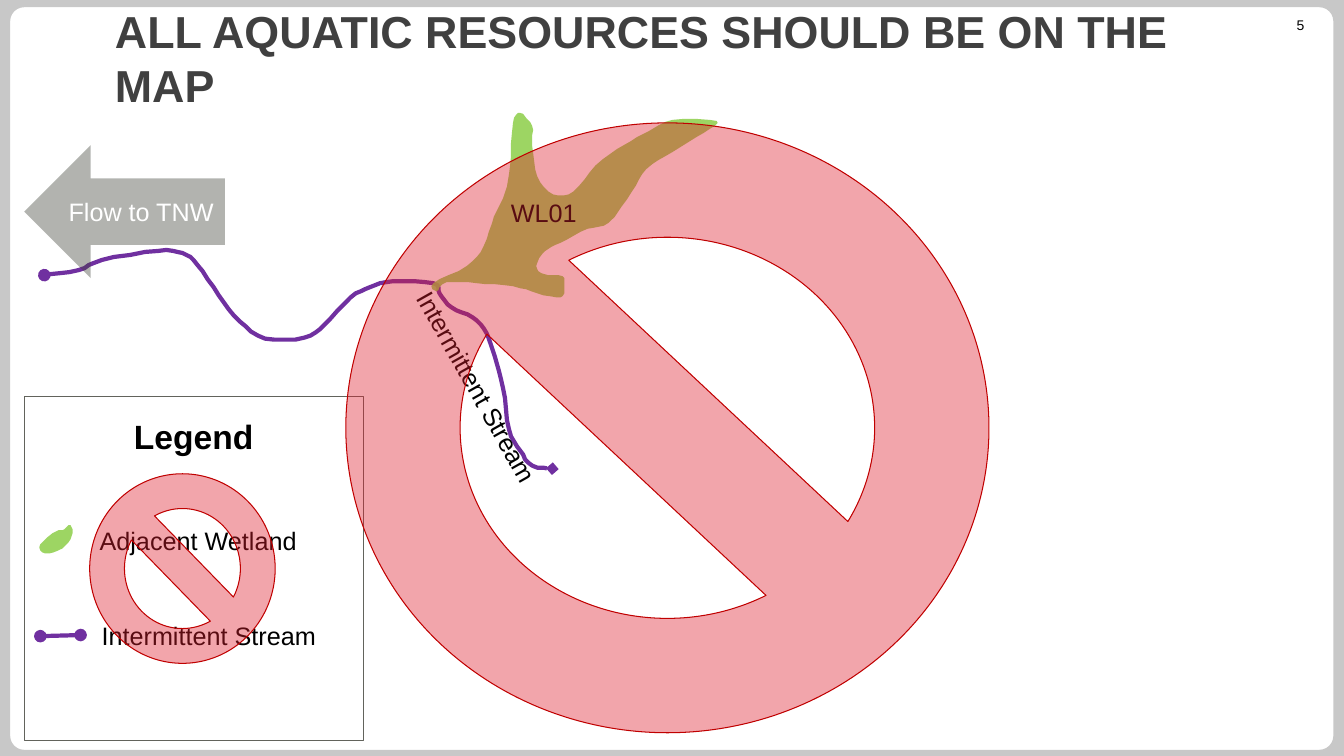
from dataclasses import dataclass
from itertools import chain

from lxml.etree import SubElement
from pptx import Presentation
from pptx.dml.color import RGBColor
from pptx.enum.shapes import MSO_CONNECTOR, MSO_SHAPE
from pptx.enum.text import MSO_ANCHOR, MSO_AUTO_SIZE, PP_ALIGN
from pptx.oxml.ns import qn
from pptx.util import Pt


@dataclass(frozen=True)
class Theme:
    face: str = "Arial"
    back: str = "C8C8C8"
    card: str = "FFFFFF"
    title: str = "404040"
    text: str = "000000"
    stream: str = "7030A0"
    marsh: str = "92D050"
    arrow: str = "3F4339"
    frame: str = "62635C"
    ban: str = "DF1F2E"
    rim: str = "C00000"
    head: int = 32
    key: int = 24
    body: int = 18
    small: int = 10
    thick: float = 3
    thin: float = 0.75


THEME = Theme()
UNIT = Pt(0.72)  # grid step of the bends below
STEPS = 4  # short lines drawn from one bend to the next

# Only the main bends are listed; smooth() fills in the curve between them.
STREAM = {
    "lower reach": [(44, 173), (78, 168), (101, 158), (157, 149), (181, 151),
                    (196, 163), (217, 193), (238, 219), (263, 236)],
    "middle reach": [(302, 235), (322, 222), (348, 195), (367, 185), (390, 179),
                     (430, 181)],
    "upper reach": [(436, 191), (448, 205), (469, 215), (483, 231), (491, 254),
                    (499, 285), (505, 326), (516, 347), (528, 362), (548, 365)],
}
MARSH = {
    "west bank": [(430, 181), (463, 164), (480, 144), (490, 115), (501, 91),
                  (506, 65)],
    "north arm": [(509, 22), (516, 12), (528, 25), (528, 45), (533, 75), (549, 93)],
    "east arm, upper bank": [(569, 90), (591, 64), (619, 44), (644, 30), (667, 19),
                             (711, 20)],
    "east arm, lower bank": [(698, 32), (667, 51), (641, 68), (627, 90), (604, 121),
                             (583, 127)],
    "south lobe": [(556, 141), (541, 149), (532, 164), (540, 172), (558, 174),
                   (560, 185), (556, 195), (533, 191)],
    "south bank": [(509, 184), (473, 181), (443, 180), (433, 189)],
}
PATCH = {"sample": [(32, 134), (16, 147), (21, 156), (38, 151), (47, 139),
                    (46, 128), (38, 133)]}


def apply(item, form):
    for name, value in form.items():
        setattr(item, name, value)


def place(box, left, top, wide, high):
    """Turn a place within a box into slide lengths."""
    return Pt(box[0] + left), Pt(box[1] + top), Pt(wide), Pt(high)


def blend(a, b, c, d, t):
    """Catmull-Rom value at t on the way from b to c."""
    return (2 * b + (c - a) * t + (2 * a - 5 * b + 4 * c - d) * t ** 2
            + (3 * b - a - 3 * c + d) * t ** 3) / 2


def smooth(bends, close):
    """Return points on a curve that runs through all bends."""
    if close:
        knots = [bends[-1], *bends, *bends[:2]]
    else:
        knots = [bends[0], *bends, bends[-1]]
    points = [bends[0]]
    for near in zip(knots, knots[1:], knots[2:], knots[3:]):
        for step in range(1, STEPS + 1):
            points.append(tuple(blend(*axis, step / STEPS) for axis in zip(*near)))
    return points


def trace(slide, box, parts, close):
    """Draw the curve through the bends of all parts, from the box corner."""
    points = smooth(list(chain(*parts.values())), close)
    pen = slide.shapes.build_freeform(*points[0], scale=UNIT)
    pen.add_line_segments(points[1:], close=close)
    return pen.convert_to_shape(Pt(box[0]), Pt(box[1]))


def paint(shape, fill=None, alpha=100, line=None, width=THEME.thin):
    shape.shadow.inherit = False
    if fill:
        shape.fill.solid()
        shape.fill.fore_color.rgb = RGBColor.from_string(fill)
        if alpha < 100:
            color = shape.element.spPr.find(qn("a:solidFill"))[0]
            SubElement(color, qn("a:alpha"), val=str(alpha * 1000))
    else:
        shape.fill.background()
    if line:
        stroke(shape, line, width)
    else:
        shape.line.fill.background()


def stroke(item, color, width, head=None, tail=None):
    item.line.color.rgb = RGBColor.from_string(color)
    item.line.width = Pt(width)
    for tag, kind in (("a:headEnd", head), ("a:tailEnd", tail)):
        if kind:
            SubElement(item.element.spPr.find(qn("a:ln")), qn(tag), type=kind)


def write(shape, text, color=THEME.text, size=THEME.body, bold=False,
          align=PP_ALIGN.LEFT, **form):
    frame = shape.text_frame
    frame.text = text
    apply(frame, {"auto_size": MSO_AUTO_SIZE.NONE, **form})
    part = frame.paragraphs[0]
    part.alignment = align
    apply(part.font, {"name": THEME.face, "size": Pt(size), "bold": bold})
    part.font.color.rgb = RGBColor.from_string(color)


def label(slide, spot, text, turn=0, **form):
    shape = slide.shapes.add_textbox(*spot)
    shape.rotation = turn
    write(shape, text, **{"word_wrap": False, **form})


def draw_marsh(slide, box, parts):
    paint(trace(slide, box, parts, True), THEME.marsh, 89)


def draw_ban(slide, spot):
    sign = slide.shapes.add_shape(MSO_SHAPE.NO_SYMBOL, *spot)
    paint(sign, THEME.ban, 40, THEME.rim)


def draw_frame(slide, box):
    """Card, page number and title."""
    slide.background.fill.solid()
    slide.background.fill.fore_color.rgb = RGBColor.from_string(THEME.back)
    card = slide.shapes.add_shape(
        MSO_SHAPE.ROUNDED_RECTANGLE, *place(box, 0, 0, *box[2:]))
    card.adjustments[0] = 0.023
    paint(card, THEME.card, line=THEME.back, width=4.5)
    slide.shapes.element.insert(2, card.element)  # behind the title
    label(slide, place(box, 873.4, 8.6, 60.5, 12.2), "5", size=THEME.small,
          align=PP_ALIGN.RIGHT, word_wrap=True, margin_top=0, margin_bottom=0)
    title = slide.shapes.title
    spot = place(box, 69.9, 7.2, 802.1, 61.9)
    apply(title, dict(zip(("left", "top", "width", "height"), spot)))
    write(title, "ALL AQUATIC RESOURCES SHOULD BE ON THE MAP", THEME.title,
          THEME.head, True, word_wrap=True, vertical_anchor=MSO_ANCHOR.MIDDLE)


def draw_key(slide, box):
    """Legend with its two entries, crossed out."""
    frame = slide.shapes.add_shape(MSO_SHAPE.RECTANGLE, *place(box, 0, 0, *box[2:]))
    paint(frame, line=THEME.frame)
    draw_marsh(slide, box, PATCH)
    label(slide, place(box, 71.3, 10.8, 100.8, 36), "Legend", size=THEME.key, bold=True)
    label(slide, place(box, 46.8, 88.6, 156.2, 28.8), "Adjacent Wetland")
    start, end = place(box, 11.5, 171.4, 0, 0)[:2], place(box, 40.3, 170.6, 0, 0)[:2]
    line = slide.shapes.add_connector(MSO_CONNECTOR.STRAIGHT, *start, *end)
    stroke(line, THEME.stream, THEME.thick, "oval", "oval")
    SubElement(line.element.spPr, qn("a:effectLst"))
    label(slide, place(box, 48.2, 156.2, 169.2, 28.8), "Intermittent Stream")
    draw_ban(slide, place(box, 46.8, 55.4, 132.5, 135.4))


def draw_map(slide, box):
    """Stream, wetland and flow arrow, crossed out."""
    stream = trace(slide, box, STREAM, False)
    paint(stream)
    stroke(stream, THEME.stream, THEME.thick, "oval", "diamond")
    draw_marsh(slide, box, MARSH)
    arrow = slide.shapes.add_shape(
        MSO_SHAPE.LEFT_ARROW, *place(box, 17.3, 31.7, 143.3, 95))
    paint(arrow, THEME.arrow, 40)
    write(arrow, "Flow to TNW", THEME.card, align=PP_ALIGN.CENTER,
          vertical_anchor=MSO_ANCHOR.MIDDLE)
    label(slide, place(box, 256.3, 190.8, 169.2, 28.8), "Intermittent Stream", 60.7)
    label(slide, place(box, 357.8, 65.5, 61.9, 28.8), "WL01")
    draw_ban(slide, place(box, 247, 15.8, 459.4, 435.6))


def main():
    deck = Presentation()
    apply(deck, {"slide_width": Pt(960), "slide_height": Pt(540)})
    slide = deck.slides.add_slide(deck.slide_layouts[5])
    draw_frame(slide, (5, 2.9, 949.7, 535))
    draw_key(slide, (17.3, 283, 242.6, 246.2))
    draw_map(slide, (0, 72, 720, 468))
    deck.save("out.pptx")


if __name__ == "__main__":
    main()
